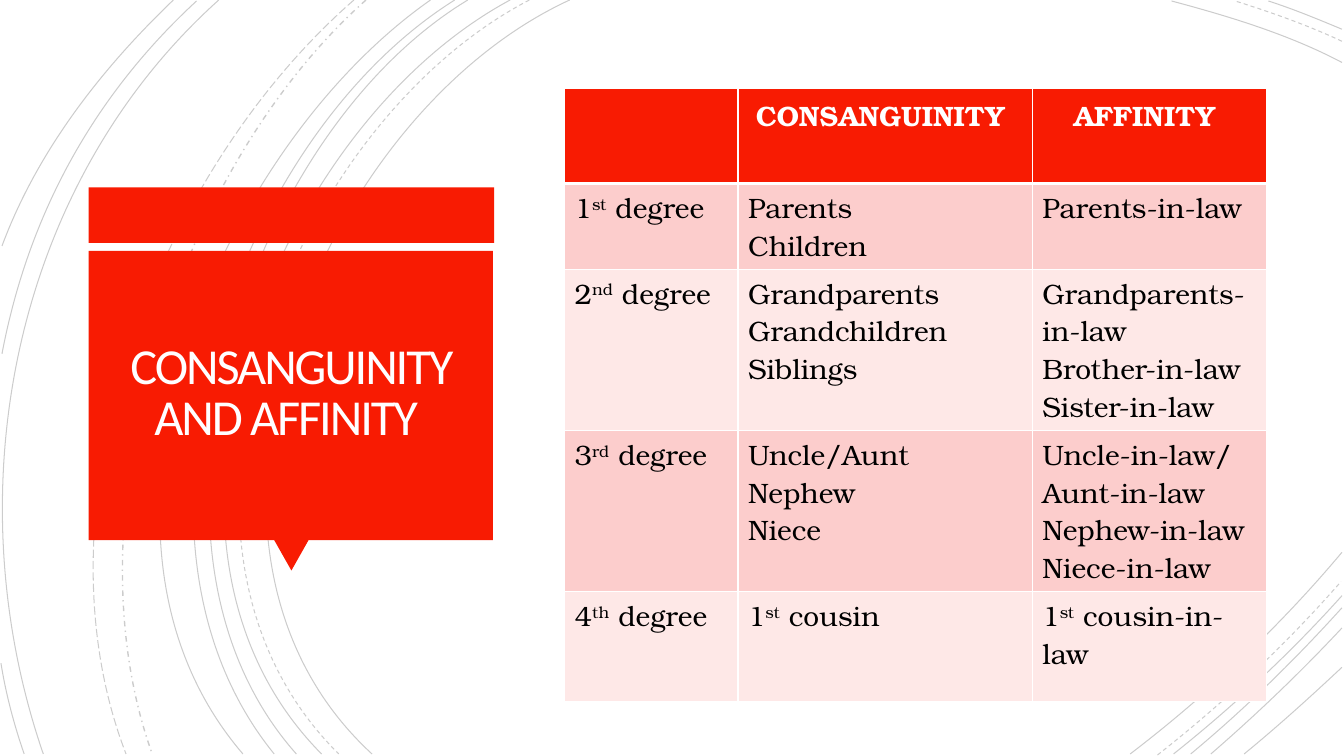
from lxml import etree
from pptx import Presentation
from pptx.dml.color import RGBColor
from pptx.enum.dml import MSO_LINE
from pptx.enum.shapes import MSO_SHAPE
from pptx.enum.text import MSO_ANCHOR, PP_ALIGN
from pptx.oxml.ns import qn
from pptx.util import Inches, Pt

RECTANGLE, TRIANGLE = MSO_SHAPE.RECTANGLE, MSO_SHAPE.ISOSCELES_TRIANGLE
MIDDLE, CENTER, LEFT = MSO_ANCHOR.MIDDLE, PP_ALIGN.CENTER, PP_ALIGN.LEFT
SOLID, DASH = MSO_LINE.SOLID, MSO_LINE.DASH
DASH_DOT, LONG_DASH = MSO_LINE.DASH_DOT, MSO_LINE.LONG_DASH

COLORS = {"red": "F81B02", "title": "FFFEFF", "white": "FFFFFF", "black": "000000",
          "dark_band": "FCCDCC", "light_band": "FEE8E7"}
GRID_STEP = Inches(0.01)
SLIDE_BOX = (0, 0, 1333, 750)
TITLE_BOX = (88, 186, 402, 380)
COLUMNS = (172, 292, 232)
ROWS = (94, 85, 160, 160, 109)
TABLE_BOX = (560, 88, sum(COLUMNS), sum(ROWS))

ARCS = [
    (SOLID, 0.75, [(565, 0), (315, 115), (143, 540), (369, 748)]),
    (SOLID, 0.75, [(1331, 62), (1278, 34), (1218, 16), (1162, 1)]),
    (SOLID, 0.75, [(1121, 748), (1197, 690), (1269, 622), (1331, 548)]),
    (DASH, 0.75, [(525, 0), (285, 125), (123, 537), (336, 748)]),
    (DASH, 0.75, [(1331, 41), (1297, 25), (1260, 12), (1225, 1)]),
    (DASH, 0.75, [(1148, 749), (1213, 698), (1275, 640), (1330, 577)]),
    (SOLID, 0.75, [(506, 0), (270, 127), (110, 537), (319, 748)]),
    (SOLID, 0.75, [(1331, 29), (1307, 19), (1283, 9), (1258, 1)]),
    (SOLID, 0.75, [(1164, 748), (1223, 701), (1280, 648), (1331, 591)]),
    (SOLID, 0.75, [(464, 0), (244, 133), (110, 541), (294, 748)]),
    (SOLID, 0.75, [(1181, 748), (1234, 704), (1284, 655), (1331, 603)]),
    (SOLID, 0.75, [(451, 0), (231, 138), (97, 533), (272, 748)]),
    (SOLID, 0.75, [(1201, 748), (1246, 709), (1290, 667), (1331, 623)]),
    (SOLID, 0.75, [(427, 0), (217, 147), (53, 529), (241, 748)]),
    (SOLID, 0.75, [(1234, 748), (1267, 721), (1299, 692), (1331, 662)]),
    (DASH_DOT, 1, [(363, 0), (176, 166), (65, 509), (151, 748)]),
    (LONG_DASH, 0.75, [(351, 0), (157, 169), (29, 499), (125, 748)]),
    (SOLID, 0.75, [(217, 0), (11, 185), (-46, 490), (43, 748)]),
    (SOLID, 0.75, [(195, 1), (92, 96), (28, 214), (2, 351)]),
    (SOLID, 0.75, [(1, 658), (6, 689), (14, 719), (24, 748)]),
    (SOLID, 0.75, [(172, 0), (100, 69), (37, 150), (2, 244)]),
]

RELATIVES = [
    ["", "CONSANGUINITY ", "AFFINITY "],
    ["1^st^ degree", "Parents\nChildren", "Parents-in-law"],
    ["2^nd^ degree", "Grandparents\nGrandchildren\nSiblings",
     "Grandparents-in-law\nBrother-in-law\nSister-in-law"],
    ["3^rd^ degree", "Uncle/Aunt\nNephew\nNiece",
     "Uncle-in-law/Aunt-in-law\nNephew-in-law\nNiece-in-law"],
    ["4^th^ degree", "1^st^ cousin", "1^st^ cousin-in-law"],
]


def color(name):
    """Return the named colour."""
    return RGBColor.from_string(COLORS[name])


def to_emu(*cells):
    """Turn grid counts into slide lengths."""
    return [round(cell * GRID_STEP) for cell in cells]


def style_font(font, fill, **values):
    """Apply a fill colour and format values to a font."""
    for name, value in values.items():
        setattr(font, name, value)
    font.color.rgb = color(fill)


def bend(arc):
    """Turn the three segments of an outline into one cubic curve."""
    outline = next(arc._element.iter(qn("a:path")))
    curve = etree.SubElement(outline, qn("a:cubicBezTo"))
    for segment in outline.findall(qn("a:lnTo")):
        curve.append(segment[0])
        outline.remove(segment)


def add_arcs(page, box):
    """Draw the faint arcs across the box."""
    left, top = box[:2]
    for dash, width, controls in ARCS:
        points = [to_emu(left + x, top + y) for x, y in controls]
        builder = page.shapes.build_freeform(*points[0])
        builder.add_line_segments(points[1:], close=False)
        arc = builder.convert_to_shape()
        bend(arc)
        arc.shadow.inherit = False
        arc.fill.background()
        arc.line.color.rgb = color("black")
        arc.line.width = Pt(width)
        arc.line.dash_style = dash
        ink = arc.line._ln.find(".//" + qn("a:srgbClr"))
        etree.SubElement(ink, qn("a:alpha")).set("val", "20000")


def add_title(page, box):
    """Build the red title panel with its top bar and pointer."""
    left, top, width, height = box
    panel_top, panel_height, pointer_width, pointer_height = top + 63, 287, 35, 31
    pointer_left = left + (width - pointer_width) / 2
    parts = [
        (RECTANGLE, 0, (left, top, width, 55)),
        (TRIANGLE, 180, (pointer_left, top + height - pointer_height,
                         pointer_width, pointer_height)),
        (RECTANGLE, 0, (left, panel_top, width - 1, panel_height)),
    ]
    for kind, rotation, place in parts:
        part = page.shapes.add_shape(kind, *to_emu(*place))
        part.rotation = rotation
        part.shadow.inherit = False
        part.fill.solid()
        part.fill.fore_color.rgb = color("red")
        part.line.fill.background()

    label = page.shapes.add_textbox(
        *to_emu(left + 9, panel_top + 8, width - 19, panel_height - 18))
    frame = label.text_frame
    frame.word_wrap = True
    frame.vertical_anchor = MIDDLE
    for side in ("left", "top", "right", "bottom"):
        setattr(frame, f"margin_{side}", Inches(0.25))
    para = frame.paragraphs[0]
    para.alignment = CENTER
    para.line_spacing = 0.85
    span = para.add_run()
    span.text = "CONSANGUINITY AND AFFINITY "
    style_font(span.font, "title", size=Pt(36), name="Calibri")
    span._r.get_or_add_rPr().set("spc", "-150")


def add_borders(cell, bottom_width):
    """Give a cell white borders with the given bottom width."""
    properties = cell._tc.get_or_add_tcPr()
    for side, width in (("L", 1), ("R", 1), ("T", 1), ("B", bottom_width)):
        line = etree.SubElement(properties, qn(f"a:ln{side}"), w=str(Pt(width)))
        fill = etree.SubElement(line, qn("a:solidFill"))
        etree.SubElement(fill, qn("a:srgbClr"), val=COLORS["white"])


def write_cell(cell, text, header):
    """Write lines into a cell, raising the parts between carets."""
    frame = cell.text_frame
    for number, line in enumerate(text.split("\n")):
        para = frame.add_paragraph() if number else frame.paragraphs[0]
        para.alignment = CENTER if header else LEFT
        for position, piece in enumerate(line.split("^")):
            span = para.add_run()
            span.text = piece
            style_font(span.font, "white" if header else "black",
                       size=Pt(20), name="TeX Gyre Bonum", bold=header)
            if position % 2:
                span._r.get_or_add_rPr().set("baseline", "30000")


def add_relatives_table(page, box):
    """Build the table of relatives by degree."""
    table = page.shapes.add_table(len(ROWS), len(COLUMNS), *to_emu(*box)).table
    for column, width in zip(table.columns, to_emu(*COLUMNS)):
        column.width = width
    for row, height in zip(table.rows, to_emu(*ROWS)):
        row.height = height
    for row_number, texts in enumerate(RELATIVES):
        header = row_number == 0
        band = "red" if header else ("light_band", "dark_band")[row_number % 2]
        for column_number, text in enumerate(texts):
            cell = table.cell(row_number, column_number)
            add_borders(cell, 3 if header else 1)
            cell.fill.solid()
            cell.fill.fore_color.rgb = color(band)
            if text:
                write_cell(cell, text, header)


def main():
    """Build and save the deck."""
    deck = Presentation()
    deck.slide_width, deck.slide_height = to_emu(*SLIDE_BOX[2:])
    page = deck.slides.add_slide(deck.slide_layouts[6])
    add_arcs(page, SLIDE_BOX)
    add_title(page, TITLE_BOX)
    add_relatives_table(page, TABLE_BOX)
    deck.save("out.pptx")


if __name__ == "__main__":
    main()
